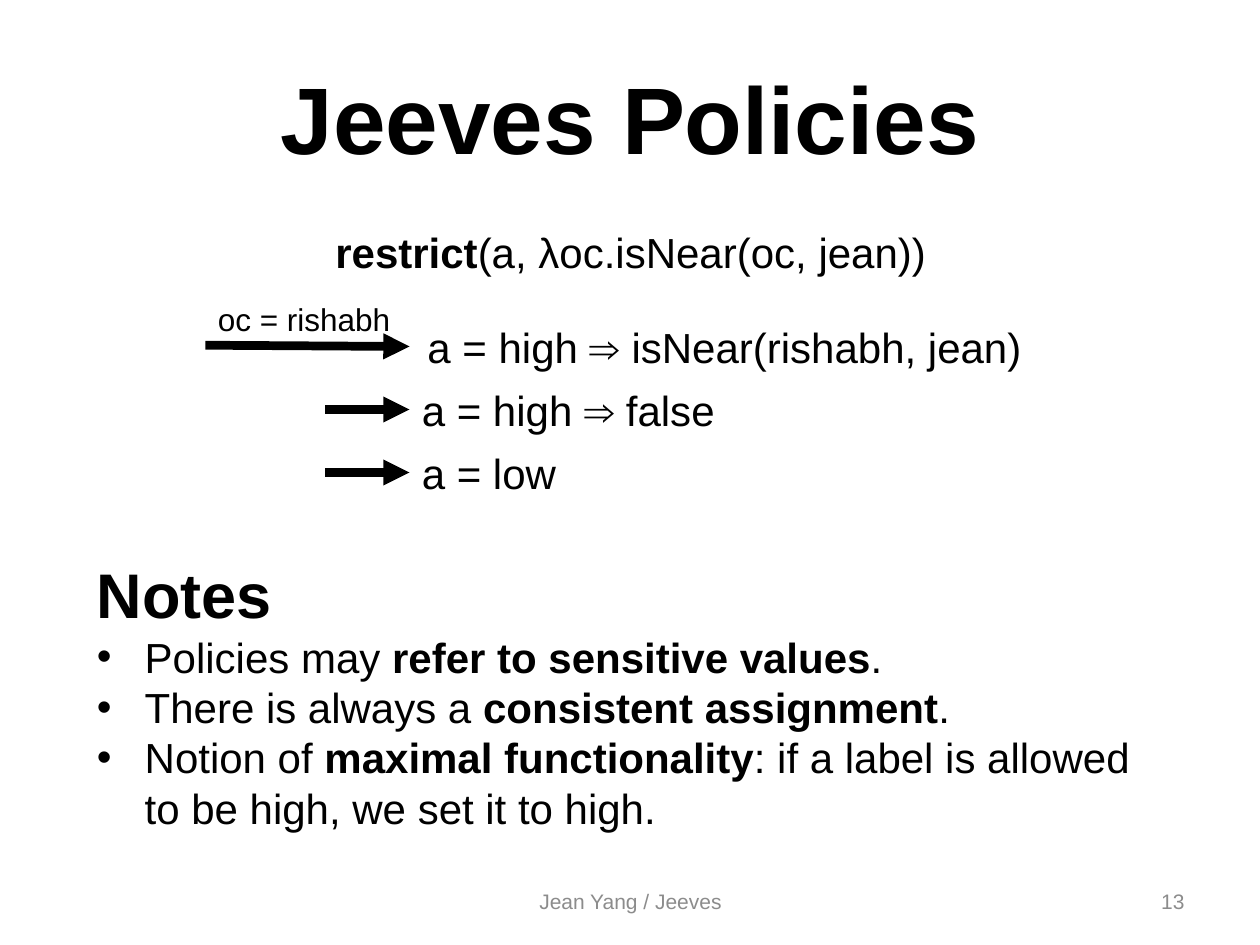
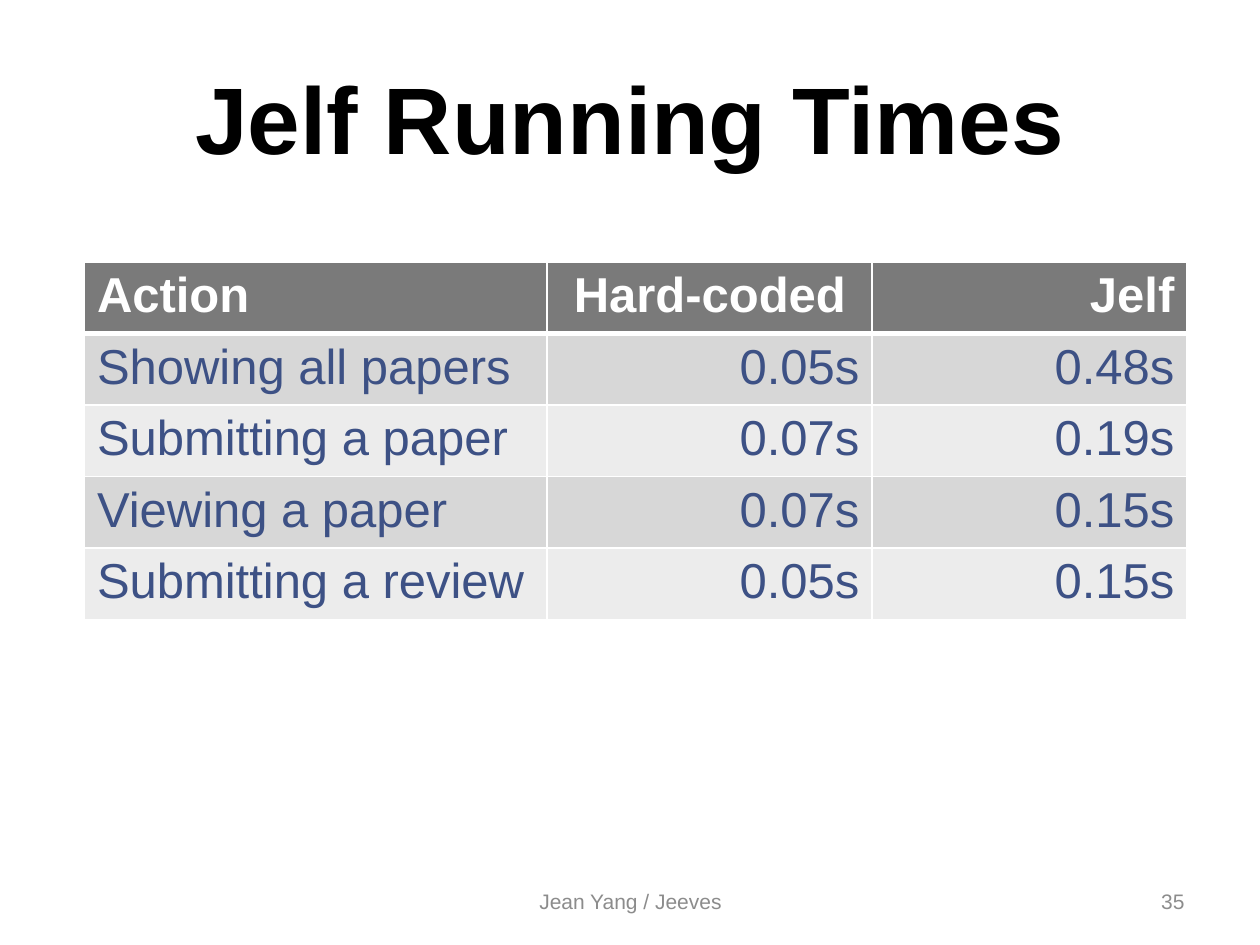
from lxml import etree
from pptx import Presentation
from pptx import util as u
from pptx.dml import color
from pptx.enum import shapes, text
from pptx.oxml import ns

FONT = "Arial"
BLACK, WHITE, FOOTER_GREY = "000000", "FFFFFF", "8C8C8C"
HEADER_FILL, BAND_FILLS, TABLE_TEXT = "7A7A7A", ("D7D7D7", "ECECEC"), "3D5185"
LEFT, CENTER, RIGHT = text.PP_ALIGN.LEFT, text.PP_ALIGN.CENTER, text.PP_ALIGN.RIGHT
TOP, MIDDLE = text.MSO_ANCHOR.TOP, text.MSO_ANCHOR.MIDDLE

TITLE_BOX = (0.5, 0.3, 9, 1.25)
FOOTER_BOX = (3.42, 6.95, 3.17, 0.4)
NUMBER_BOX = (7.17, 6.95, 2.33, 0.4)


def rgb(value):
    return color.RGBColor.from_string(value)


def inches(lengths):
    return [u.Inches(length) for length in lengths]


def add_xml(parent, tag, **attributes):
    return etree.SubElement(parent, ns.qn(tag), attributes)


def add_spans(para, parts, size, hue=BLACK, align=LEFT):
    """Add (words, bold) parts to a paragraph, one run each."""
    para.alignment = align
    for words, bold in parts:
        span = para.add_run()
        span.text = words
        span.font.name = FONT
        span.font.size = u.Pt(size)
        span.font.bold = bold
        span.font.color.rgb = rgb(hue)


def indent(para, left, first=0.0):
    properties = para._p.get_or_add_pPr()
    properties.set("marL", str(u.Inches(left)))
    properties.set("indent", str(u.Inches(first)))
    return properties


def add_text(page, place, parts, size, hue=BLACK, align=LEFT, anchor=TOP):
    box = page.shapes.add_textbox(*inches(place))
    box.text_frame.word_wrap = True
    box.text_frame.vertical_anchor = anchor
    add_spans(box.text_frame.paragraphs[0], parts, size, hue, align)
    return box


def add_arrow(page, start, end):
    arrow = page.shapes.add_connector(
        shapes.MSO_CONNECTOR.STRAIGHT, *inches(start + end))
    arrow.line.color.rgb = rgb(BLACK)
    arrow.line.width = u.Pt(5)
    add_xml(arrow.line._get_or_add_ln(), "a:tailEnd", type="triangle")
    add_xml(arrow._element.spPr, "a:effectLst")
    return arrow


def add_page(deck, title, number):
    """Add a blank slide with the shared title, footer and slide number."""
    page = deck.slides.add_slide(deck.slide_layouts[6])
    add_text(page, TITLE_BOX, [(title, True)], 54, align=CENTER, anchor=MIDDLE)
    add_text(page, FOOTER_BOX, [("Jean Yang / Jeeves", False)], 12,
             FOOTER_GREY, CENTER, MIDDLE)
    add_text(page, NUMBER_BOX, [(str(number), False)], 12,
             FOOTER_GREY, RIGHT, MIDDLE)
    return page


def add_derivation(page, left, top):
    """Show the policy and its step-by-step evaluation."""
    add_text(page, (left, top, 6.75, 0.5),
             [("restrict", True), ("(a, λoc.isNear(oc, jean))", False)],
             24, align=CENTER)

    step_left = left + 1.62
    first_step = add_text(page, (left - 0.38, top + 0.75, 8, 0.5),
                          [("a = high ⇒ isNear(rishabh, jean)", False)],
                          24, align=CENTER)
    indent(first_step.text_frame.paragraphs[0], 1)
    add_text(page, (left, top + 0.58, 1.62, 0.4), [("oc = rishabh", False)], 18)
    add_arrow(page, (left, top + 0.99), (step_left, top + 1))

    for row, words in enumerate(("a = high ⇒ false", "a = low")):
        step_top = top + 1.25 + 0.5 * row
        middle = step_top + 0.25
        step = add_text(page, (step_left, step_top, 5.67, 0.5),
                        [(words, False)], 24)
        arrow = add_arrow(page, (step_left - 0.67, middle), (step_left, middle))
        arrow.end_connect(step, 1)


def add_notes_list(page, place, heading, items):
    box = add_text(page, place, [(heading, True)], 36)
    for parts in items:
        para = box.text_frame.add_paragraph()
        add_spans(para, parts, 24)
        properties = indent(para, 0.38, -0.38)
        add_xml(properties, "a:buFont", typeface=FONT)
        add_xml(properties, "a:buChar", char="•")


def style_cell(cell, words, fill, hue, align, header):
    properties = cell._tc.get_or_add_tcPr()
    for side in ("L", "R", "T", "B"):
        heavy = header and side == "B"
        border = add_xml(properties, f"a:ln{side}", w=str(u.Pt(3 if heavy else 1)))
        add_xml(add_xml(border, "a:solidFill"), "a:srgbClr", val=WHITE)
    cell.fill.solid()
    cell.fill.fore_color.rgb = rgb(fill)
    add_spans(cell.text_frame.paragraphs[0], [(words, header)], 28, hue, align)


def add_times_table(page, left, top, widths, row_height, rows):
    frame = page.shapes.add_table(
        len(rows), len(widths),
        *inches((left, top, sum(widths), row_height * len(rows))))
    table = frame.table
    for column, width in zip(table.columns, widths):
        column.width = u.Inches(width)
    for r, values in enumerate(rows):
        table.rows[r].height = u.Inches(row_height)
        header = r == 0
        fill = HEADER_FILL if header else BAND_FILLS[(r - 1) % 2]
        for c, words in enumerate(values):
            style_cell(table.cell(r, c), words, fill,
                       WHITE if header else TABLE_TEXT,
                       RIGHT if c else LEFT, header)


def build_policies(deck):
    page = add_page(deck, "Jeeves Policies", 13)
    add_derivation(page, 1.63, 1.75)
    add_notes_list(page, (0.67, 4.36, 8.58, 2.39), "Notes", [
        [("Policies may ", False), ("refer to sensitive values", True),
         (".", False)],
        [("There is always a ", False), ("consistent assignment", True),
         (".", False)],
        [("Notion of ", False), ("maximal functionality", True),
         (": if a label is allowed to be high, we set it to high.", False)],
    ])


def build_running_times(deck):
    page = add_page(deck, "Jelf Running Times", 35)
    add_times_table(page, 0.67, 2.08, (3.67, 2.58, 2.5), 0.53, [
        ("Action", "Hard-coded ", "Jelf"),
        ("Showing all papers", "0.05s", "0.48s"),
        ("Submitting a paper", "0.07s", "0.19s"),
        ("Viewing a paper", "0.07s", "0.15s"),
        ("Submitting a review", "0.05s", "0.15s"),
    ])


def main():
    deck = Presentation()
    deck.slide_width, deck.slide_height = inches((10, 7.5))
    build_policies(deck)
    build_running_times(deck)
    deck.save("out.pptx")


if __name__ == "__main__":
    main()
